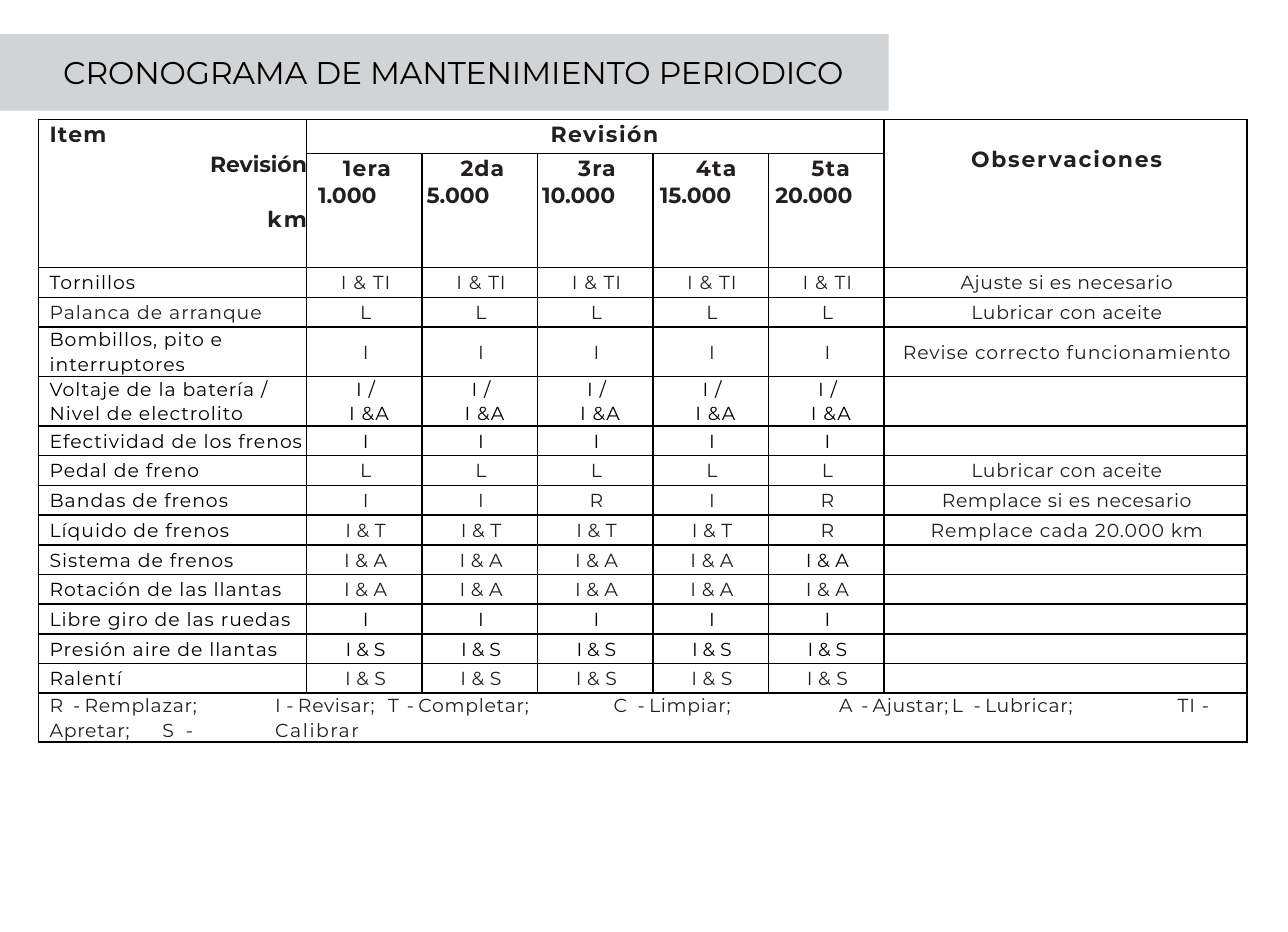
from lxml import etree
from pptx import Presentation
from pptx import util as u
from pptx.dml import color as dml
from pptx.enum import text as t
from pptx.oxml import ns

THEME = {
    "font": "Montserrat", "black": "000000", "ink": "231F20",
    "band": "D1D3D4", "paper": "FFFFFF",
    "title": 10, "header": 7, "body": 6, "border": 0.5,
}
BLACK, INK = THEME["black"], THEME["ink"]

TITLE = "CRONOGRAMA DE MANTENIMIENTO PERIODICO"
VISITS = [
    ("1era", "1.000", 0.16, 0.05), ("2da", "5.000", 0.17, 0.02),
    ("3ra", "10.000", 0.18, 0.02), ("4ta", "15.000", 0.19, 0.03),
    ("5ta", "20.000", 0.19, 0.03),
]
TASKS = [
    ("Tornillos", ["I & TI"] * 5, INK, 0.3, "Ajuste si es necesario", 0.2),
    ("Palanca de arranque", ["L"] * 5, INK, 0.3, "Lubricar con aceite", 0.2),
    ("Bombillos, pito e interruptores", ["I"] * 5, INK, 0.3,
     "Revise correcto funcionamiento", 0.3),
    ("Voltaje de la batería / Nivel de electrolito", ["I /\nI &A"] * 5, BLACK, 0.3, "", 0),
    ("Efectividad de los frenos", ["I"] * 5, BLACK, 0.3, "", 0),
    ("Pedal de freno", ["L"] * 5, INK, 0.3, "Lubricar con aceite", 0.2),
    ("Bandas de frenos", ["I", "I", "R", "I", "R"], INK, 0.3, "Remplace si es necesario", 0.2),
    ("Líquido de frenos", ["I & T"] * 4 + ["R"], INK, 0.1, "Remplace cada 20.000 km", 0.3),
    ("Sistema de frenos", ["I & A"] * 5, INK, 0.1, "", 0),
    ("Rotación de las llantas", ["I & A"] * 5, INK, 0.1, "", 0),
    ("Libre giro de las ruedas", ["I"] * 5, BLACK, 0, "", 0),
    ("Presión aire de llantas", ["I & S"] * 5, BLACK, 0, "", 0),
    ("Ralentí", ["I & S"] * 5, INK, 0.1, "", 0),
]
LABEL_COLORS = {"Palanca de arranque": INK}
CODE_COLORS = {("Sistema de frenos", 4): BLACK}
TWO_LINE_TASKS = (2, 3)
LEGEND = [
    ("R", 0.8, "Remplazar;", 0), ("I", 0.1, "Revisar;", 0.72), ("T", 0.5, "Completar;", 1.22),
    ("C", 0.9, "Limpiar;", 1.9), ("A", 0.6, "Ajustar;", 2.48), ("L", 0.9, "Lubricar;", 3.02),
    ("TI", 0.3, "Apretar;", 3.6), ("S", 1.1, "Calibrar", 4.16),
]
LAST_MEANING_TAB = 4.39

SLIDE_WIDTH, SLIDE_HEIGHT = 5.71, 4.13
TABLE_LEFT, TABLE_TOP, TABLE_WIDTH, TABLE_HEIGHT = 0.17, 0.53, 5.36, 2.67
ITEM_WIDTH, NOTE_WIDTH = 1.19, 1.61
HEADER_ROWS, TALL_ROW = [0.15, 0.5], 0.22
INDENT, CODE_INDENT, LINE = 0.05, 0.01, 7.8


def add_text(frame, content, size=THEME["body"], bold=False, color=INK, spacing=0,
             align=t.PP_ALIGN.LEFT, left=0, line=None, before=0, same_line=False):
    paragraph = frame.paragraphs[-1]
    if not same_line:
        if paragraph.runs:
            paragraph = frame.add_paragraph()
        paragraph.alignment = align
        paragraph._p.get_or_add_pPr().set("marL", str(u.Inches(left)))
        paragraph._p.get_or_add_pPr().set("indent", "0")
        paragraph.space_before = u.Pt(before)
        if line:
            paragraph.line_spacing = u.Pt(line)
    run = paragraph.add_run()
    run.text = content
    run.font.name = THEME["font"]
    run.font.size = u.Pt(size)
    run.font.bold = bold
    run.font.color.rgb = dml.RGBColor.from_string(color)
    run._r.get_or_add_rPr().set("spc", str(round(spacing * 100)))


def style_cell(cell, middle):
    cell.margin_left = cell.margin_right = cell.margin_top = cell.margin_bottom = 0
    cell.vertical_anchor = t.MSO_ANCHOR.MIDDLE if middle else t.MSO_ANCHOR.TOP
    cell.fill.solid()
    cell.fill.fore_color.rgb = dml.RGBColor.from_string(THEME["paper"])
    properties = cell._tc.get_or_add_tcPr()
    for position, side in enumerate(("lnL", "lnR", "lnT", "lnB")):
        border = etree.Element(ns.qn(f"a:{side}"), w=str(u.Pt(THEME["border"])))
        fill = etree.SubElement(border, ns.qn("a:solidFill"))
        etree.SubElement(fill, ns.qn("a:srgbClr"), val=BLACK)
        properties.insert(position, border)


def add_title(slide):
    title = slide.shapes.title
    title.left, title.top = 0, u.Inches(0.15)
    title.width, title.height = u.Inches(3.94), u.Inches(0.34)
    title.fill.solid()
    title.fill.fore_color.rgb = dml.RGBColor.from_string(THEME["band"])
    frame = title.text_frame
    frame.margin_left = frame.margin_right = frame.margin_top = frame.margin_bottom = 0
    frame.auto_size = t.MSO_AUTO_SIZE.NONE
    frame.word_wrap = True
    frame.vertical_anchor = t.MSO_ANCHOR.MIDDLE
    add_text(frame, TITLE, size=THEME["title"], color=BLACK, left=0.28)


def add_grid(slide):
    visit_width = (TABLE_WIDTH - ITEM_WIDTH - NOTE_WIDTH) / len(VISITS)
    single = len(TASKS) - len(TWO_LINE_TASKS) + 1
    row_height = (TABLE_HEIGHT - sum(HEADER_ROWS) - TALL_ROW * len(TWO_LINE_TASKS)) / single
    widths = [ITEM_WIDTH] + [visit_width] * len(VISITS) + [NOTE_WIDTH]
    heights = HEADER_ROWS + [TALL_ROW if index in TWO_LINE_TASKS else row_height
                             for index in range(len(TASKS))] + [row_height]
    table = slide.shapes.add_table(
        len(heights), len(widths), u.Inches(TABLE_LEFT), u.Inches(TABLE_TOP),
        u.Inches(TABLE_WIDTH), u.Inches(TABLE_HEIGHT)).table
    table.first_row = table.horz_banding = False
    for column, width in zip(table.columns, widths):
        column.width = u.Inches(width)
    for row, height in zip(table.rows, heights):
        row.height = u.Inches(height)
    for index, row in enumerate(table.rows):
        for cell in row.cells:
            style_cell(cell, index >= len(HEADER_ROWS))
    return table


def fill_header(table):
    header = {"size": THEME["header"], "bold": True}
    center, right = t.PP_ALIGN.CENTER, t.PP_ALIGN.RIGHT
    last = len(VISITS) + 1
    table.cell(0, 0).merge(table.cell(1, 0))
    table.cell(0, 1).merge(table.cell(0, last - 1))
    table.cell(0, last).merge(table.cell(1, last))
    for row in (0, 1):
        for column in range(last):
            table.cell(row, column).margin_top = u.Inches(0.01)
    item = table.cell(0, 0).text_frame
    add_text(item, "Item", spacing=0.4, left=INDENT, **header)
    add_text(item, "Revisión", align=right, before=0.8, **header)
    add_text(item, "km", spacing=0.7, align=right, before=9.3, **header)
    add_text(table.cell(0, 1).text_frame, "Revisión", spacing=0.5, align=center, left=0.08, **header)
    table.cell(0, last).margin_top = u.Inches(0.12)
    add_text(table.cell(0, last).text_frame, "Observaciones", spacing=0.6, align=center,
             left=0.01, **header)
    for column, (visit, distance, visit_left, distance_left) in enumerate(VISITS, 1):
        frame = table.cell(1, column).text_frame
        add_text(frame, visit, spacing=0.4, left=visit_left, **header)
        add_text(frame, distance, left=distance_left, **header)


def fill_tasks(table):
    centered = {"align": t.PP_ALIGN.CENTER, "line": LINE}
    for row, (label, codes, color, spacing, note, note_spacing) in enumerate(TASKS, len(HEADER_ROWS)):
        add_text(table.cell(row, 0).text_frame, label, color=LABEL_COLORS.get(label, BLACK),
                 spacing=0.3, left=INDENT, line=LINE)
        for visit, code in enumerate(codes):
            for number, part in enumerate(code.split("\n")):
                add_text(table.cell(row, visit + 1).text_frame, part, spacing=spacing,
                         color=CODE_COLORS.get((label, visit), color),
                         left=CODE_INDENT + 0.03 * number, **centered)
        if note:
            add_text(table.cell(row, len(VISITS) + 1).text_frame, note, spacing=note_spacing,
                     left=CODE_INDENT, **centered)


def fill_legend(table):
    row = len(table.rows) - 1
    cell = table.cell(row, 0)
    cell.merge(table.cell(row, len(table.columns) - 1))
    cell.margin_left = u.Inches(INDENT)
    frame = cell.text_frame
    final = len(LEGEND) - 1
    for index, (code, spacing, meaning, _) in enumerate(LEGEND):
        add_text(frame, ("\t" if index else "") + code + " ", spacing=spacing,
                 same_line=index > 0, line=LINE)
        add_text(frame, "-\t" if index == final else "- ", spacing=-0.2, same_line=True)
        add_text(frame, meaning, spacing=0.5 if index == final else 0.22, same_line=True)
    tabs = etree.SubElement(frame.paragraphs[0]._p.get_or_add_pPr(), ns.qn("a:tabLst"))
    for position in [entry[3] for entry in LEGEND[1:]] + [LAST_MEANING_TAB]:
        etree.SubElement(tabs, ns.qn("a:tab"), pos=str(u.Inches(position)), algn="l")


def shrink_empty_cells(table):
    for cell in table.iter_cells():
        if not cell.text_frame.text:
            etree.SubElement(cell.text_frame.paragraphs[0]._p, ns.qn("a:endParaRPr"),
                             sz=str(THEME["body"] * 100))


def main():
    presentation = Presentation()
    presentation.slide_width = u.Inches(SLIDE_WIDTH)
    presentation.slide_height = u.Inches(SLIDE_HEIGHT)
    slide = presentation.slides.add_slide(presentation.slide_layouts[5])
    add_title(slide)
    table = add_grid(slide)
    fill_header(table)
    fill_tasks(table)
    fill_legend(table)
    shrink_empty_cells(table)
    presentation.save("out.pptx")


if __name__ == "__main__":
    main()
